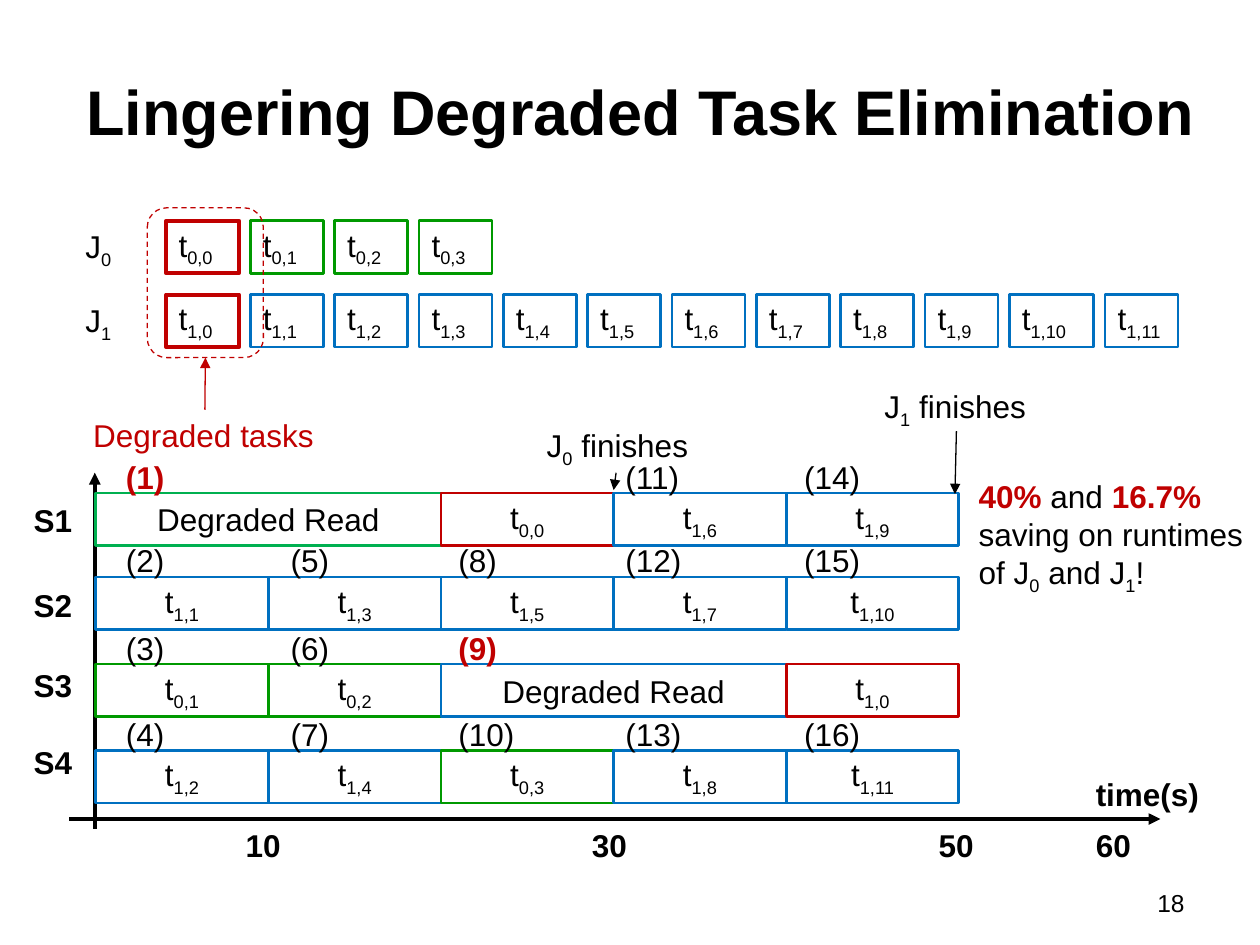
from lxml.etree import SubElement
from pptx import Presentation
from pptx.dml.color import RGBColor
from pptx.enum.dml import MSO_LINE
from pptx.enum.shapes import MSO_CONNECTOR, MSO_SHAPE
from pptx.enum.text import MSO_ANCHOR, MSO_AUTO_SIZE, PP_ALIGN
from pptx.oxml.ns import qn
from pptx.util import Cm, Pt

BLACK, RED, GREEN, BLUE, LIME = "000000", "C00000", "009900", "0070C0", "00B050"

TITLE = "Lingering Degraded Task Elimination"
# In texts, _..._ marks a subscript and *...* a red bold part.
JOBS = [("J_0_", 0, 4, GREEN, 4.45), ("J_1_", 1, 12, BLUE, 5.94)]
SCHEDULE = [
    ("S1", 9.94, 9.98, [("Degraded Read", 2, LIME), ("t_0,0_", 1, RED),
                        ("t_1,6_", 1, BLUE), ("t_1,9_", 1, BLUE)]),
    ("S2", 11.63, 11.68, [("t_1,1_", 1, BLUE), ("t_1,3_", 1, BLUE), ("t_1,5_", 1, BLUE),
                          ("t_1,7_", 1, BLUE), ("t_1,10_", 1, BLUE)]),
    ("S3", 13.39, 13.31, [("t_0,1_", 1, GREEN), ("t_0,2_", 1, GREEN),
                          ("Degraded Read", 2, BLUE), ("t_1,0_", 1, RED)]),
    ("S4", 15.13, 14.86, [("t_1,2_", 1, BLUE), ("t_1,4_", 1, BLUE), ("t_0,3_", 1, GREEN),
                          ("t_1,8_", 1, BLUE), ("t_1,11_", 1, BLUE)]),
]
ORDER_LEFTS = [2.29, 5.61, 8.99, 12.36, 15.96]
ORDERS = [
    ["*(1)*", None, None, "(11)", "(14)"],
    ["(2)", "(5)", "(8)", "(12)", "(15)"],
    ["(3)", "(6)", "*(9)*", None, None],
    ["(4)", "(7)", "(10)", "(13)", "(16)"],
]
TICKS = [("10", 4.7), ("30", 11.68), ("50", 18.67), ("60", 21.84)]
FINISHES = [("J_0_ finishes", 10.77, 8.46, (12.42, 9.53), (12.37, 9.88)),
            ("J_1_ finishes", 17.58, 7.67, (19.28, 8.69), (19.25, 9.96))]
SAVING = "*40%* and *16.7%* saving on runtimes of J_0_ and J_1_!"

TILE_WIDTH, WIDE_TILE, TILE_GAP, TILE_LEFT, TILE_HEIGHT = 1.47, 1.7, 0.23, 3.35, 1.06
SLOT_LEFT, SLOT_WIDTH = 1.93, 3.48
TEXT_HEIGHT = 1.02


def rgb(color):
    """Turn a hex string into a colour."""
    return RGBColor.from_string(color)


def write(frame, text, color=BLACK, bold=False, align=PP_ALIGN.LEFT, size=18):
    """Fill a text frame, reading the subscript and emphasis marks."""
    paragraph = frame.paragraphs[0]
    paragraph.alignment = align
    font = paragraph.font
    font.name, font.size, font.bold = "Arial", Pt(size), bold
    font.color.rgb = rgb(color)
    for i, part in enumerate(text.split("*")):
        for j, piece in enumerate(part.split("_")):
            if not piece:
                continue
            run = paragraph.add_run()
            run.text = piece
            if i % 2:
                run.font.bold = True
                run.font.color.rgb = rgb(RED)
            if j % 2:
                run._r.get_or_add_rPr().set("baseline", "-25000")


def add_label(slide, text, left, top, width, height=TEXT_HEIGHT, wrap=False, **style):
    """Add a text box."""
    label = slide.shapes.add_textbox(Cm(left), Cm(top), Cm(width), Cm(height))
    frame = label.text_frame
    frame.word_wrap = wrap
    frame.auto_size = MSO_AUTO_SIZE.SHAPE_TO_FIT_TEXT
    write(frame, text, **style)
    return label


def add_box(slide, left, top, width, height, color, weight, preset=MSO_SHAPE.RECTANGLE):
    """Add an unfilled outlined shape."""
    box = slide.shapes.add_shape(preset, Cm(left), Cm(top), Cm(width), Cm(height))
    box.shadow.inherit = False
    box.fill.background()
    box.line.color.rgb = rgb(color)
    box.line.width = Pt(weight)
    box.text_frame.vertical_anchor = MSO_ANCHOR.MIDDLE
    return box


def add_arrow(slide, start, end, color=BLACK, weight=0.75):
    """Add a straight arrow."""
    arrow = slide.shapes.add_connector(MSO_CONNECTOR.STRAIGHT, *map(Cm, start + end))
    arrow.line.color.rgb = rgb(color)
    arrow.line.width = Pt(weight)
    SubElement(arrow.line._get_or_add_ln(), qn("a:tailEnd"), type="triangle")
    SubElement(arrow._element.spPr, qn("a:effectLst"))
    return arrow


def add_jobs(slide):
    """Draw the task tiles of each job and mark the degraded ones."""
    for name, job, count, color, top in JOBS:
        left = TILE_LEFT
        for task in range(count):
            width = WIDE_TILE if task == 10 else TILE_WIDTH
            outline, weight = (color, 1.5) if task else (RED, 2.25)
            tile = add_box(slide, left, top, width, TILE_HEIGHT, outline, weight)
            tile.text_frame.word_wrap = False
            write(tile.text_frame, f"t_{job},{task}_")
            left += width + TILE_GAP
        add_label(slide, name, 1.47, top, 1.07)
    degraded = add_box(slide, 2.97, 4.19, 2.34, 3.02, RED, 0.75, MSO_SHAPE.ROUNDED_RECTANGLE)
    degraded.line.dash_style = MSO_LINE.DASH
    caption = add_label(slide, "Degraded tasks", 1.63, 8.26, 5, color=RED)
    pointer = add_arrow(slide, (4.13, 8.26), (4.13, 7.21), RED)
    pointer.begin_connect(caption, 0)
    pointer.end_connect(degraded, 2)


def add_schedule(slide):
    """Draw the axes, the server rows and the order numbers."""
    add_arrow(slide, (1.4, 16.51), (23.39, 16.51), weight=2.25)
    add_arrow(slide, (1.91, 16.71), (1.91, 9.53), weight=2.25)
    for text, left in TICKS:
        add_label(slide, text, left, 16.53, 1.22, bold=True)
    add_label(slide, "time(s)", 21.84, 15.49, 2.62, bold=True)
    for (server, top, name_top, tasks), orders in zip(SCHEDULE, ORDERS):
        add_label(slide, server, 0.43, name_top, 1.3, bold=True)
        slot = 0
        for text, span, color in tasks:
            box = add_box(slide, SLOT_LEFT + slot * SLOT_WIDTH, top,
                          span * SLOT_WIDTH, TILE_HEIGHT, color, 1.5)
            write(box.text_frame, text, align=PP_ALIGN.CENTER)
            slot += span
        for text, left in zip(orders, ORDER_LEFTS):
            if text:
                width = 1.65 if len(text) == 4 else 1.3
                add_label(slide, text, left, top - 0.84, width)


def main():
    """Build the slide and save it."""
    deck = Presentation()
    deck.slide_width, deck.slide_height = Cm(25.4), Cm(19.05)
    slide = deck.slides.add_slide(deck.slide_layouts[5])
    title = slide.shapes.title
    title.left, title.top, title.width, title.height = map(Cm, (1.27, 0.64, 23.29, 3.18))
    title.text_frame.vertical_anchor = MSO_ANCHOR.MIDDLE
    write(title.text_frame, TITLE, bold=True, align=PP_ALIGN.CENTER, size=36)
    add_jobs(slide)
    add_schedule(slide)
    for text, left, top, start, end in FINISHES:
        add_label(slide, text, left, top, 3.43)
        add_arrow(slide, start, end)
    add_label(slide, SAVING, 19.48, 9.5, 5.92, 2.57, wrap=True)
    add_label(slide, "18", 18.21, 17.78, 5.92, 0.89, wrap=True, align=PP_ALIGN.RIGHT, size=14)
    deck.save("out.pptx")


if __name__ == "__main__":
    main()
